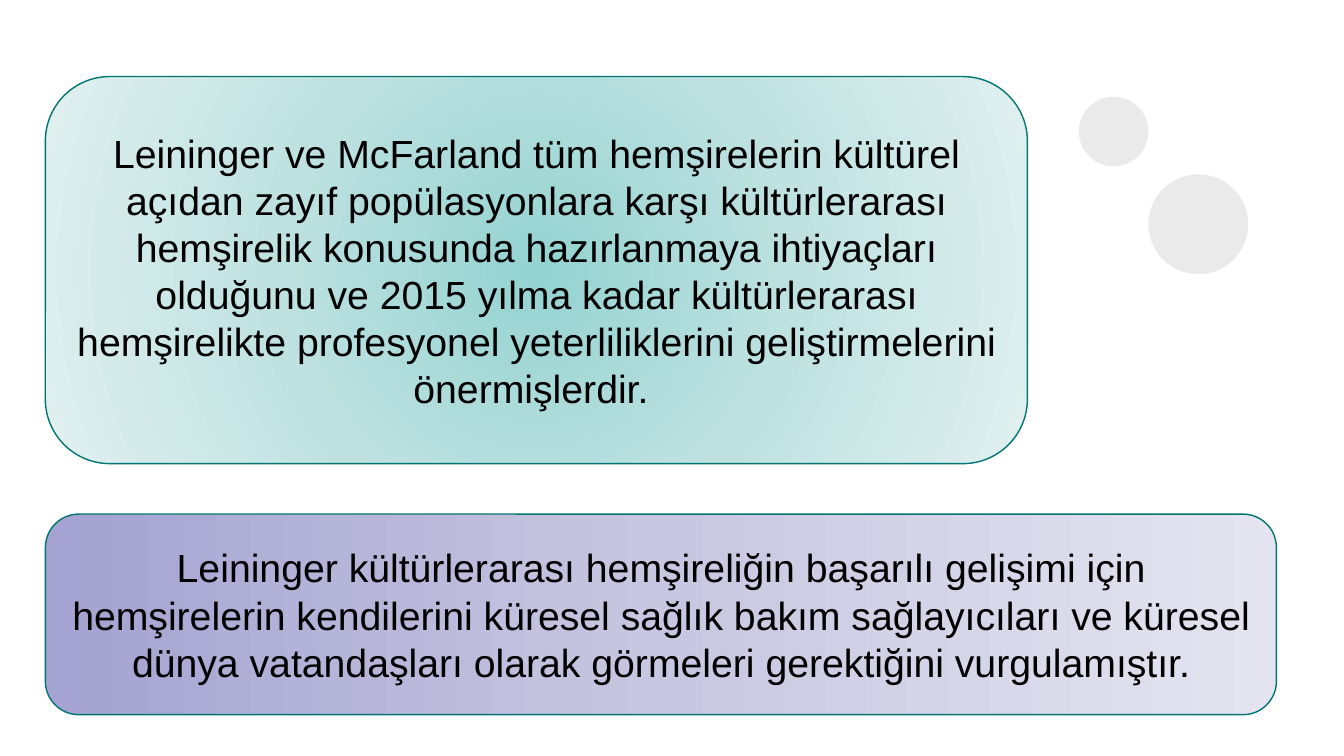
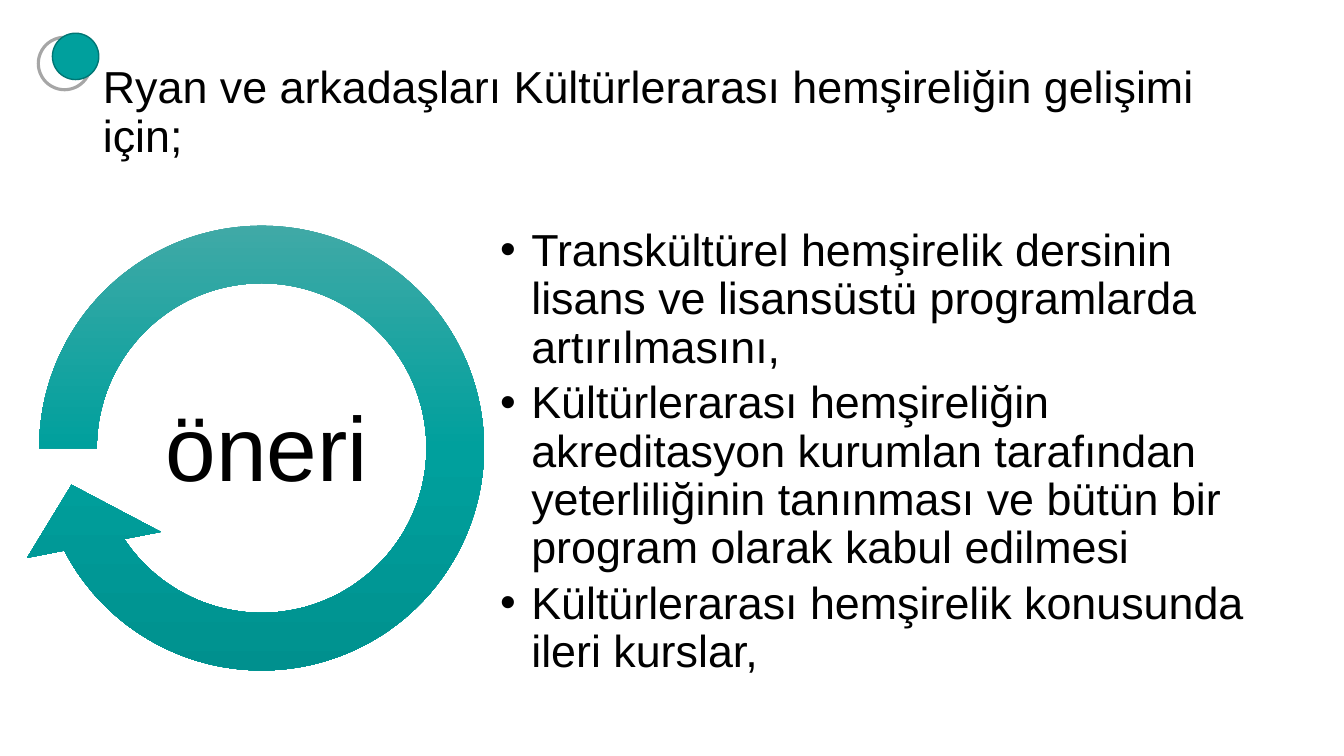
from lxml import etree
from pptx import Presentation
from pptx.dml.color import RGBColor
from pptx.enum.shapes import MSO_SHAPE
from pptx.enum.text import MSO_ANCHOR, MSO_AUTO_SIZE, PP_ALIGN
from pptx.oxml.ns import qn
from pptx.util import Pt

PX = 9144
SLIDE_WIDTH, SLIDE_HEIGHT = 1333, 750
TITLE_LAYOUT, BLANK_LAYOUT = 1, 6
ELLIPSE = MSO_SHAPE.OVAL
ROUNDED = MSO_SHAPE.ROUNDED_RECTANGLE
CIRCULAR_ARROW = MSO_SHAPE.CIRCULAR_ARROW
LEFT, CENTER = PP_ALIGN.LEFT, PP_ALIGN.CENTER
MIDDLE = MSO_ANCHOR.MIDDLE
NO_AUTOFIT = MSO_AUTO_SIZE.NONE

BLACK = RGBColor(0x00, 0x00, 0x00)
LIGHT_GRAY = RGBColor(0xEA, 0xEA, 0xEA)
RING_GRAY = RGBColor(0xA6, 0xA6, 0xA6)
TEAL = RGBColor(0x00, 0xA0, 0x9D)
DARK_TEAL = RGBColor(0x00, 0x76, 0x74)
TEAL_TINTS = (RGBColor(0x94, 0xD3, 0xD1), RGBColor(0xBF, 0xE2, 0xE1), RGBColor(0xE0, 0xF0, 0xEF))
LILAC_TINTS = (RGBColor(0xA4, 0xA3, 0xD1), RGBColor(0xC8, 0xC7, 0xE1), RGBColor(0xE4, 0xE4, 0xF0))
ARROW_TEALS = (RGBColor(0x4B, 0xAB, 0xA8), TEAL, RGBColor(0x00, 0x8E, 0x8C))
ARROW_ADJUSTMENTS = (0.11, 11.42, 90, 108, 0.13)


def set_values(target, values):
    for name, value in values.items():
        setattr(target, name, value)


class Deck:
    font = {"name": "Arial"}
    paragraph_format = {"space_before": Pt(0), "space_after": Pt(0)}
    frame_format = {"word_wrap": True, "auto_size": NO_AUTOFIT, "vertical_anchor": MIDDLE}

    def __init__(self):
        self.presentation = Presentation()
        self.slide = None
        set_values(self.presentation, {"slide_width": SLIDE_WIDTH * PX, "slide_height": SLIDE_HEIGHT * PX})

    def add_slide(self, layout):
        self.slide = self.presentation.slides.add_slide(self.presentation.slide_layouts[layout])

    def set_text(self, shape, texts, size, align=LEFT, spacing=1, after=0, margin=None, indent=0):
        frame = shape.text_frame
        set_values(frame, self.frame_format)
        if margin is not None:
            sides = ("margin_left", "margin_top", "margin_right", "margin_bottom")
            set_values(frame, dict.fromkeys(sides, margin * PX))
        frame.text = "\n".join(texts)
        for paragraph in frame.paragraphs:
            set_values(paragraph, {**self.paragraph_format, "alignment": align,
                                   "line_spacing": spacing, "space_after": Pt(after)})
            set_values(paragraph.runs[0].font, self.font | {"size": Pt(size)})
            paragraph.runs[0].font.color.rgb = BLACK
            if indent:
                properties = paragraph._p.get_or_add_pPr()
                properties.set("marL", str(indent * PX))
                properties.set("indent", str(-indent * PX))

    def placeholder(self, index, box, texts, **text_format):
        shape = self.slide.placeholders[index]
        names = ("left", "top", "width", "height")
        set_values(shape, {name: length * PX for name, length in zip(names, box)})
        self.set_text(shape, texts, **text_format)

    def text_box(self, box, text, **text_format):
        shape = self.slide.shapes.add_textbox(*(length * PX for length in box))
        self.set_text(shape, [text], **text_format)

    def shape(self, kind, box, fill=None, line=None, line_width=1):
        shape = self.slide.shapes.add_shape(kind, *(length * PX for length in box))
        shape.shadow.inherit = False
        for target, color in ((shape.fill, fill), (shape.line.fill, line)):
            if color is None:
                target.background()
            else:
                target.solid()
                target.fore_color.rgb = color
        if line is not None:
            shape.line.width = Pt(line_width)
        return shape

    def gradient(self, shape, colors, angle=None):
        shape.fill.gradient()
        gradient = shape._element.spPr.find(qn("a:gradFill"))
        gradient.clear()
        stops = etree.SubElement(gradient, qn("a:gsLst"))
        for position, color in zip((0, 50000, 100000), colors):
            stop = etree.SubElement(stops, qn("a:gs"), pos=str(position))
            etree.SubElement(stop, qn("a:srgbClr"), val=str(color))
        if angle is None:
            circle = etree.SubElement(gradient, qn("a:path"))
            circle.set("path", "circle")
            etree.SubElement(circle, qn("a:fillToRect"), dict.fromkeys("ltrb", "50000"))
        else:
            etree.SubElement(gradient, qn("a:lin"), ang=str(angle * 60000), scaled="0")

    def panel(self, box, text, colors, angle=None):
        shape = self.shape(ROUNDED, box, line=DARK_TEAL)
        self.gradient(shape, colors, angle)
        self.set_text(shape, [text], size=28, align=CENTER)

    def circular_arrow(self, box, colors):
        shape = self.shape(CIRCULAR_ARROW, box)
        for index, value in enumerate(ARROW_ADJUSTMENTS):
            shape.adjustments[index] = value
        self.gradient(shape, colors, angle=90)


def build_nursing_slide(deck):
    deck.add_slide(BLANK_LAYOUT)
    for left, top, diameter in ((1139, 173, 99), (1070, 96, 69)):
        deck.shape(ELLIPSE, (left, top, diameter, diameter), fill=LIGHT_GRAY)
    deck.panel((45, 510, 1221, 199),
               "Leininger kültürlerarası hemşireliğin başarılı gelişimi için hemşirelerin kendilerini "
               "küresel sağlık bakım sağlayıcıları ve küresel dünya vatandaşları olarak görmeleri "
               "gerektiğini vurgulamıştır.", LILAC_TINTS, angle=0)
    deck.panel((45, 76, 974, 384),
               "Leininger ve McFarland tüm hemşirelerin kültürel açıdan zayıf popülasyonlara karşı "
               "kültürlerarası hemşirelik konusunda hazırlanmaya ihtiyaçları olduğunu ve 2015 yılma "
               "kadar kültürlerarası hemşirelikte profesyonel yeterliliklerini geliştirmelerini "
               "önermişlerdir. ", TEAL_TINTS)


def build_suggestion_slide(deck):
    deck.add_slide(TITLE_LAYOUT)
    deck.shape(ELLIPSE, (38, 37, 52, 52), line=RING_GRAY, line_width=2.25)
    deck.shape(ELLIPSE, (52, 33, 46, 46), fill=TEAL, line=DARK_TEAL)
    deck.placeholder(0, (92, 40, 1150, 145),
                     ["Ryan ve arkadaşları Kültürlerarası hemşireliğin gelişimi için;"],
                     size=32, spacing=0.9)
    deck.circular_arrow((0, 185, 519, 519), ARROW_TEALS)
    deck.placeholder(1, (493, 230, 783, 438), [
        "Transkültürel hemşirelik dersinin lisans ve lisansüstü programlarda artırılmasını,",
        "Kültürlerarası hemşireliğin akreditasyon kurumlan tarafından yeterliliğinin tanınması "
        "ve bütün bir program olarak kabul edilmesi",
        "Kültürlerarası hemşirelik konusunda ileri kurslar,",
    ], size=32, spacing=0.9, after=5, margin=3, indent=31)
    deck.text_box((120, 376, 289, 145), "öneri", size=65, align=CENTER, spacing=0.9, margin=5)


def main():
    deck = Deck()
    build_nursing_slide(deck)
    build_suggestion_slide(deck)
    deck.presentation.save("out.pptx")


if __name__ == "__main__":
    main()
